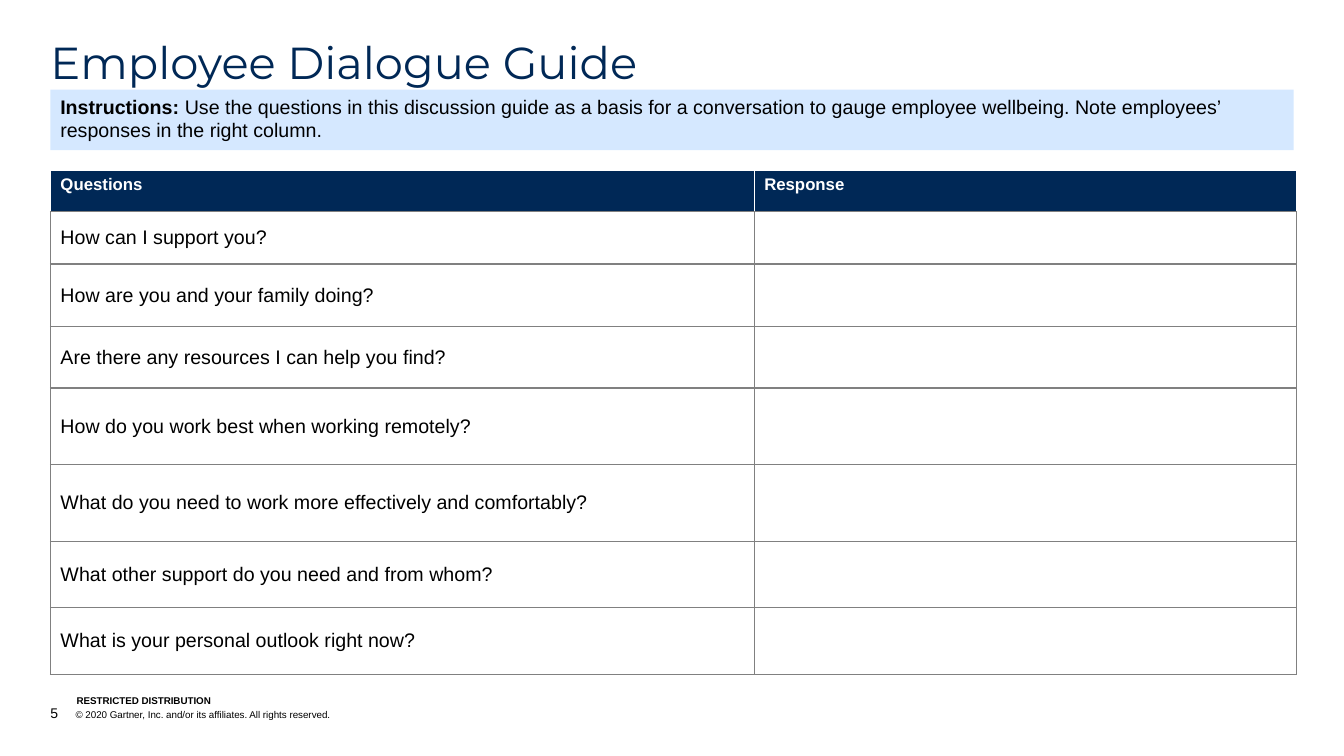
"""Build the employee dialogue guide slide."""
import pptx
import pptx.dml.color
import pptx.enum.shapes
import pptx.enum.text
import pptx.oxml
import pptx.oxml.ns
import pptx.util

Inches = pptx.util.Inches
Pt = pptx.util.Pt
ANCHOR = pptx.enum.text.MSO_ANCHOR
ALIGN = pptx.enum.text.PP_ALIGN

COLORS = {"navy": "002856", "pale": "D5E8FF", "grey": "808080",
          "black": "000000", "white": "FFFFFF"}
QUESTIONS = [
    ("How can I support you?", 0.52),
    ("How are you and your family doing?", 0.62),
    ("Are there any resources I can help you find?", 0.61),
    ("How do you work best when working remotely?", 0.76),
    ("What do you need to work more effectively and comfortably?", 0.76),
    ("What other support do you need and from whom?", 0.66),
    ("What is your personal outlook right now?", 0.66),
]
HEADERS = ("Questions", "Response")
HEADER_HEIGHT = 0.41
COLUMN_WIDTHS = (6.98, 5.38)
LEFT = 0.5
WIDTH = 12.33


def rgb(name):
    return pptx.dml.color.RGBColor.from_string(COLORS[name])


def set_font(font, size, color="black", bold=False, name="Arial"):
    font.name = name
    font.size = Pt(size)
    font.bold = bold
    font.color.rgb = rgb(color)


def add_run(p, text):
    r = p.add_run()
    r.text = text
    return r


def clear_margins(tf):
    tf.margin_left = tf.margin_right = tf.margin_top = tf.margin_bottom = 0
    tf.word_wrap = True


def add_title(s, text):
    title = s.shapes.title
    title.left, title.top = Inches(LEFT), Inches(0.4)
    title.width, title.height = Inches(WIDTH), Inches(0.48)
    tf = title.text_frame
    clear_margins(tf)
    tf.auto_size = pptx.enum.text.MSO_AUTO_SIZE.NONE
    tf.vertical_anchor = ANCHOR.TOP
    tf.text = text
    p = tf.paragraphs[0]
    p.alignment = ALIGN.LEFT
    p.line_spacing = 0.9
    set_font(p.font, 32, "navy", name="Montserrat")


def add_instructions(s, label, text):
    sp = s.shapes.add_shape(pptx.enum.shapes.MSO_SHAPE.RECTANGLE, Inches(LEFT),
                            Inches(0.89), Inches(WIDTH), Inches(0.6))
    sp.shadow.inherit = False
    sp.fill.solid()
    sp.fill.fore_color.rgb = rgb("pale")
    sp.line.fill.background()
    tf = sp.text_frame
    tf.word_wrap = True
    tf.vertical_anchor = ANCHOR.TOP
    p = tf.paragraphs[0]
    p.alignment = ALIGN.LEFT
    for part, bold in ((label, True), (text, False)):
        set_font(add_run(p, part).font, 14, bold=bold)


def set_borders(cell, sides):
    tc_pr = cell._tc.get_or_add_tcPr()
    for i, side in enumerate(sides):
        tc_pr.insert(i, pptx.oxml.parse_xml(
            f'<a:ln{side} {pptx.oxml.ns.nsdecls("a")} w="{Pt(1)}"><a:solidFill>'
            f'<a:srgbClr val="{COLORS["grey"]}"/></a:solidFill></a:ln{side}>'))


def fill_cell(cell, text, header):
    cell.fill.solid()
    cell.fill.fore_color.rgb = rgb("navy" if header else "white")
    cell.vertical_anchor = ANCHOR.TOP if header else ANCHOR.MIDDLE
    cell.text = text
    size, color = (12, "white") if header else (14, "black")
    set_font(cell.text_frame.paragraphs[0].font, size, color, header)
    set_borders(cell, "B" if header else "LRTB")


def add_question_table(s):
    heights = [HEADER_HEIGHT] + [height for _, height in QUESTIONS]
    rows = [HEADERS] + [(question, "") for question, _ in QUESTIONS]
    table = s.shapes.add_table(
        len(rows), len(HEADERS), Inches(LEFT), Inches(1.69),
        Inches(sum(COLUMN_WIDTHS)), Inches(sum(heights))).table
    table.horz_banding = False
    for column, width in zip(table.columns, COLUMN_WIDTHS):
        column.width = Inches(width)
    for i, (texts, height) in enumerate(zip(rows, heights)):
        table.rows[i].height = Inches(height)
        for j, text in enumerate(texts):
            fill_cell(table.cell(i, j), text, i == 0)


def add_footer_box(s, left, top, width, height):
    box = s.shapes.add_textbox(Inches(left), Inches(top), Inches(width), Inches(height))
    tf = box.text_frame
    clear_margins(tf)
    tf.vertical_anchor = ANCHOR.BOTTOM
    return tf.paragraphs[0]


def add_footer(s):
    p = add_footer_box(s, LEFT, 6.99, 7.99, 0.17)
    p_pr = p._p.get_or_add_pPr()
    p_pr.set("marL", str(Inches(0.25)))
    p_pr.set("indent", str(-Inches(0.25)))
    p_pr.append(pptx.oxml.parse_xml(
        f'<a:tabLst {pptx.oxml.ns.nsdecls("a")}>'
        f'<a:tab pos="{Inches(0.25)}" algn="l"/></a:tabLst>'))
    notice = "\t© 2020 Gartner, Inc. and/or its affiliates. All rights reserved."
    for text, size in (("5", 10), (notice, 7)):
        set_font(add_run(p, text).font, size)

    p = add_footer_box(s, 0.76, 6.89, 2.53, 0.12)
    add_run(p, "RESTRICTED DISTRIBUTION")
    set_font(p.font, 7, bold=True)


def main():
    prs = pptx.Presentation()
    prs.slide_width, prs.slide_height = Inches(13.33), Inches(7.5)
    s = prs.slides.add_slide(prs.slide_layouts[5])
    add_footer(s)
    add_title(s, "Employee Dialogue Guide")
    add_instructions(
        s, "Instructions: ",
        "Use the questions in this discussion guide as a basis for a conversation "
        "to gauge employee wellbeing. Note employees’ responses in the right column.")
    add_question_table(s)
    prs.save("out.pptx")


if __name__ == "__main__":
    main()
